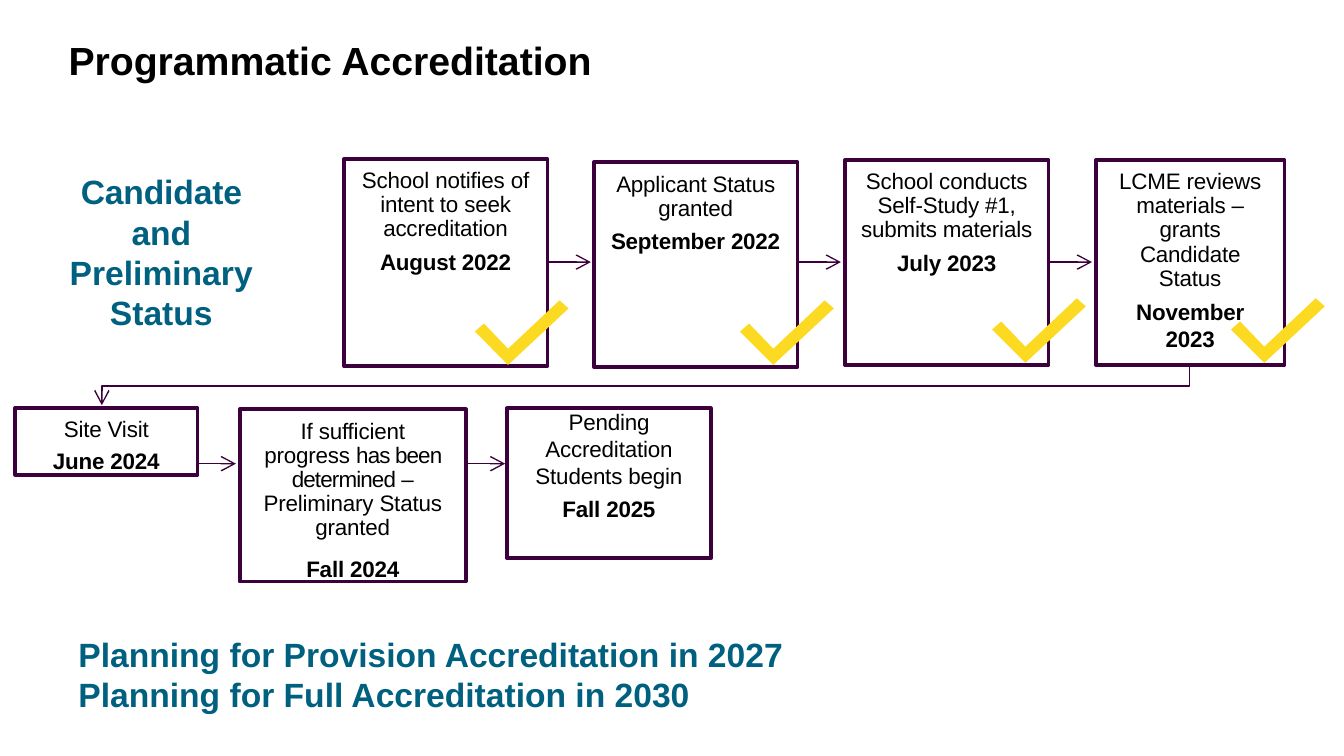
from lxml.etree import SubElement
from pptx import Presentation
from pptx.dml.color import RGBColor
from pptx.enum.shapes import MSO_CONNECTOR as Connector, MSO_SHAPE as Shape
from pptx.enum.text import MSO_ANCHOR as Anchor, PP_ALIGN as Align
from pptx.oxml.ns import qn
from pptx.util import Pt

PX = 9144  # EMU per px, 100 px to the inch
SLIDE_SIZE = (1333, 750)
FONT = "Arial"
COLORS = {"ink": "000000", "plum": "3C003C", "teal": "006080", "check": "FDDA22"}
TIGHT, TIGHTER = -0.1, -0.6  # letter spacing in points

# Headings: place, size, color, anchor, alignment, insets (side, top), paragraphs of runs
HEADINGS = [
    ((68, 35, 536, 48), 28, "ink", Anchor.MIDDLE, Align.LEFT, (0, 1),
     [[("Programmatic Accreditation", 0)]]),
    ((68, 169, 184, 163), 24, "teal", Anchor.TOP, Align.CENTER, (0, 1),
     [[("Candidate and ", TIGHT), ("Preliminary Status", 0)]]),
    ((68, 624, 735, 91), 24, "teal", Anchor.TOP, Align.LEFT, (10, 5),
     [[("Planning for Provision Accreditation in 2027", 0)],
      [("Planning for Full Accreditation in 2030", 0)]]),
]

# Steps: place, insets (side, top), paragraphs as (runs, line spacing, space before)
# The last paragraph of each step is its date.
STEPS = [
    ((341, 158, 202, 205), (10, 10),
     [([("School notifies of intent to seek accreditation", TIGHT)], 0.9, 0),
      ([("August 2022", TIGHT)], None, 4.8)]),
    ((589, 161, 202, 203), (15, 10),
     [([("Applicant Status granted", TIGHT)], Pt(17.3), 0),
      ([("September 2022", TIGHT)], None, 4.5)]),
    ((838, 159, 202, 203), (13, 10),
     [([("School conducts Self-Study #1, submits materials", TIGHT)], 0.9, 0),
      ([("July 2023", TIGHT)], None, 4.8)]),
    ((1087, 159, 187, 203), (20, 10),
     [([("LCME reviews materials – grants Candidate Status", TIGHT)], 0.9, 0),
      ([("November 2023", TIGHT)], None, 4.8)]),
    ((15, 405, 181, 66), (0, 10),
     [([("Site Visit", TIGHT)], Pt(17), 0),
      ([("June 2024", TIGHT)], Pt(18.2), 4.8)]),
    ((238, 406, 224, 171), (20, 10),
     [([("If sufficient progress ", TIGHT), ("has been determined ", TIGHTER),
        ("–", TIGHT)], Pt(17.3), 0),
      ([("Preliminary Status granted", TIGHT)], Pt(17), 0),
      ([("Fall 2024", TIGHT)], Pt(15.1), 15.3)]),
    ((503, 405, 202, 149), (0, 0),
     [([("Pending Accreditation Students begin", TIGHT)], None, 0),
      ([("Fall 2025", TIGHT)], None, 4.8)]),
]

# Arrows: start x, end x, y
ARROWS = [(543, 586, 260), (791, 834, 260), (1040, 1083, 260),
          (196, 234, 460), (462, 501, 460)]
RETURN_ARROW = [(1180, 362), (1180, 383), (101, 383), (101, 402)]

CHECK_OUTLINE = [(9, 23), (0, 31), (33, 64), (93, 8), (84, 0), (33, 48)]
CHECK_CORNERS = [(471, 298), (734, 298), (984, 296), (1221, 296)]


def color(name):
    return RGBColor.from_string(COLORS[name])


def emu(lengths):
    return [length * PX for length in lengths]


def set_frame(frame, insets, anchor, wrap=True):
    side, top = emu(insets)
    frame.margin_left = frame.margin_right = side
    frame.margin_top, frame.margin_bottom = top, 0
    frame.vertical_anchor = anchor
    frame.word_wrap = wrap


def add_para(frame, index, runs, size, ink, bold, align):
    para = frame.paragraphs[0] if index == 0 else frame.add_paragraph()
    para.alignment = align
    for text, spacing in runs:
        span = para.add_run()
        span.text = text
        span.font.name, span.font.size, span.font.bold = FONT, Pt(size), bold
        span.font.color.rgb = color(ink)
        if spacing:
            span._r.get_or_add_rPr().set("spc", str(round(spacing * 100)))
    return para


def add_heading(page, place, size, ink, anchor, align, insets, paragraphs):
    frame = page.shapes.add_textbox(*emu(place)).text_frame
    set_frame(frame, insets, anchor)
    for index, runs in enumerate(paragraphs):
        add_para(frame, index, runs, size, ink, True, align)


def add_step(page, place, insets, paragraphs):
    box = page.shapes.add_shape(Shape.RECTANGLE, *emu(place))
    box.shadow.inherit = False
    box.fill.background()
    box.line.color.rgb = color("plum")
    box.line.width = Pt(2.75)
    set_frame(box.text_frame, insets, Anchor.TOP)
    for index, (runs, line_spacing, before) in enumerate(paragraphs):
        is_date = index == len(paragraphs) - 1
        para = add_para(box.text_frame, index, runs, 16, "ink", is_date, Align.CENTER)
        if line_spacing:
            para.line_spacing = line_spacing
        if before:
            para.space_before = Pt(before)


def add_outline(page, points, close):
    builder = page.shapes.build_freeform(*points[0], scale=PX)
    builder.add_line_segments(points[1:], close=close)
    outline = builder.convert_to_shape()
    outline.shadow.inherit = False
    return outline


def style_arrow(line):
    line.color.rgb = color("plum")
    line.width = Pt(1)
    SubElement(line._get_or_add_ln(), qn("a:tailEnd"), type="arrow", w="lg", len="lg")


def add_arrow(page, start, end, y):
    arrow = page.shapes.add_connector(Connector.STRAIGHT, *emu((start, y, end, y)))
    style_arrow(arrow.line)
    SubElement(arrow._element.spPr, qn("a:effectLst"))


def add_check(page, left, top):
    check = add_outline(page, [(left + x, top + y) for x, y in CHECK_OUTLINE], True)
    check.fill.solid()
    check.fill.fore_color.rgb = color("check")
    check.line.fill.background()


def main():
    deck = Presentation()
    deck.slide_width, deck.slide_height = emu(SLIDE_SIZE)
    page = deck.slides.add_slide(deck.slide_layouts[6])
    for heading in HEADINGS:
        add_heading(page, *heading)
    for arrow in ARROWS:
        add_arrow(page, *arrow)
    return_arrow = add_outline(page, RETURN_ARROW, False)
    return_arrow.fill.background()
    style_arrow(return_arrow.line)
    for step in STEPS:
        add_step(page, *step)
    for corner in CHECK_CORNERS:
        add_check(page, *corner)
    deck.save("out.pptx")


if __name__ == "__main__":
    main()
